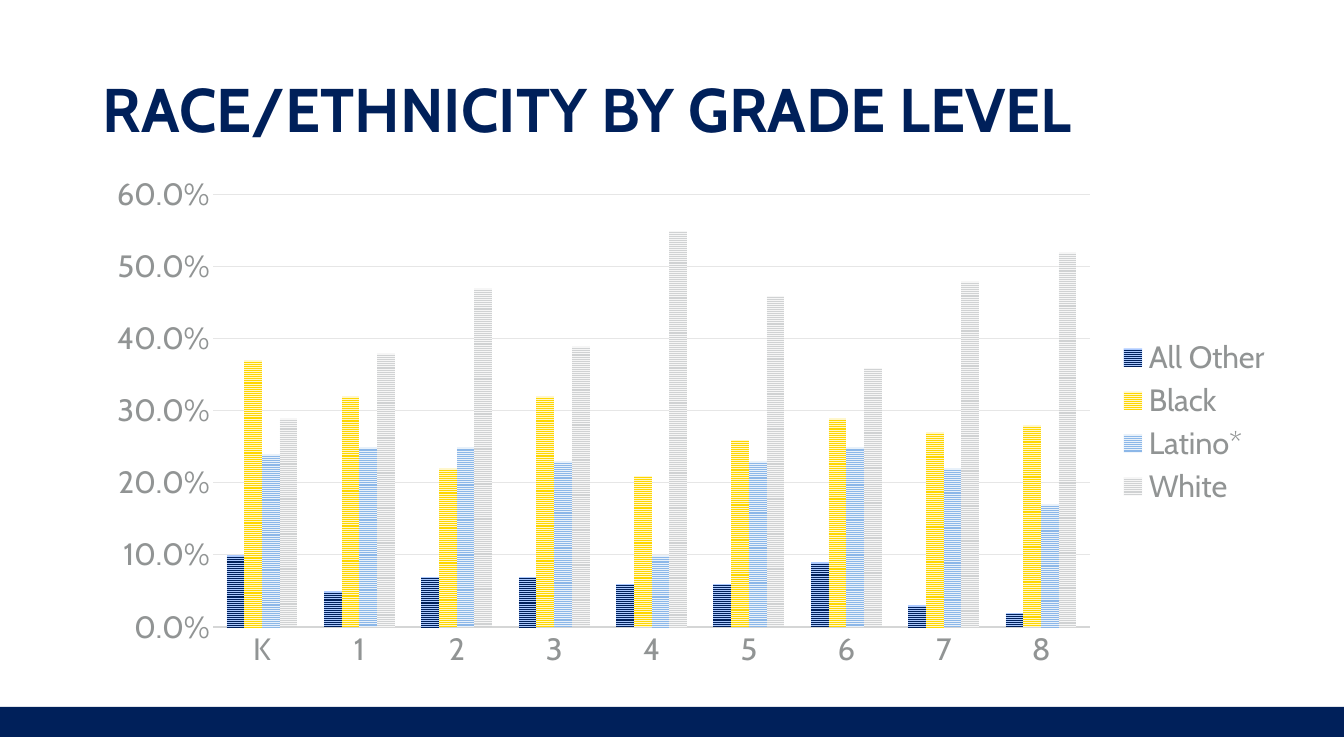
from dataclasses import dataclass

from pptx import Presentation, util as u
from pptx.chart.data import CategoryChartData
from pptx.dml.color import RGBColor
from pptx.enum import chart as charts, dml, shapes, text


@dataclass(frozen=True)
class Theme:
    font: str = "Cabin"
    navy: str = "00205A"
    label: str = "919494"
    axis: str = "D5D6D6"
    grid: str = "E6E6E6"
    title_size: int = 44
    chart_size: int = 22
    # Foreground and background of each striped series
    stripes: tuple = (
        ("00205A", "ABC9FF"),
        ("FED601", "FFF7CC"),
        ("8CB7E8", "E8F1FA"),
        ("D0D2D3", "F6F6F6"),
    )


GRADES = ["K", "1", "2", "3", "4", "5", "6", "7", "8"]
SHARES = {
    "All Other": [0.10, 0.05, 0.07, 0.07, 0.06, 0.06, 0.09, 0.03, 0.02],
    "Black": [0.37, 0.32, 0.22, 0.32, 0.21, 0.26, 0.29, 0.27, 0.28],
    "Latino*": [0.24, 0.25, 0.25, 0.23, 0.10, 0.23, 0.25, 0.22, 0.17],
    "White": [0.29, 0.38, 0.47, 0.39, 0.55, 0.46, 0.36, 0.48, 0.52],
}
PAGE_WIDTH, PAGE_HEIGHT = 1344, 756


def px(*lengths):
    return [u.Emu(round(length * u.Inches(1) / 100.8)) for length in lengths]


def rgb(code):
    return RGBColor.from_string(code)


class SlideBuilder:
    def __init__(self, page, theme):
        self.page = page
        self.theme = theme

    def style_font(self, font, size, color, bold=False):
        font.name = self.theme.font
        font.size = u.Pt(size)
        font.bold = bold
        font.color.rgb = rgb(color)

    def band(self, left, top, width, height, color):
        box = self.page.shapes.add_shape(
            shapes.MSO_SHAPE.RECTANGLE, *px(left, top, width, height))
        box.shadow.inherit = False
        box.fill.solid()
        box.fill.fore_color.rgb = rgb(color)
        box.line.fill.background()

    def title(self, left, top, width, height, words):
        box = self.page.shapes.add_textbox(*px(left, top, width, height))
        frame = box.text_frame
        frame.text = words
        frame.word_wrap = True
        frame.vertical_anchor = text.MSO_ANCHOR.MIDDLE
        para = frame.paragraphs[0]
        para.line_spacing = 0.9
        self.style_font(para.runs[0].font, self.theme.title_size, self.theme.navy, True)

    def column_chart(self, left, top, width, height, categories, shares):
        theme = self.theme
        chart_data = CategoryChartData(number_format="0.0%")
        chart_data.categories = categories
        for name, values in shares.items():
            chart_data.add_series(name, values)
        chart = self.page.shapes.add_chart(
            charts.XL_CHART_TYPE.COLUMN_CLUSTERED,
            *px(left, top, width, height), chart_data).chart
        chart.has_title = False
        self.style_font(chart.font, theme.chart_size, theme.label)

        # Striped columns
        plot = chart.plots[0]
        plot.vary_by_categories = False
        plot.gap_width = 150
        plot.overlap = 0
        for series, (front, back) in zip(plot.series, theme.stripes):
            series.invert_if_negative = False
            fill = series.format.fill
            fill.patterned()
            fill.pattern = dml.MSO_PATTERN.NARROW_HORIZONTAL
            fill.fore_color.rgb = rgb(front)
            fill.back_color.rgb = rgb(back)

        # Axes and gridlines
        for axis in (chart.category_axis, chart.value_axis):
            axis.major_tick_mark = axis.minor_tick_mark = charts.XL_TICK_MARK.NONE
            self.style_font(axis.tick_labels.font, theme.chart_size, theme.label)
        base_line = chart.category_axis.format.line
        base_line.color.rgb = rgb(theme.axis)
        base_line.width = u.Pt(1.5)
        scale = chart.value_axis
        scale.minimum_scale, scale.maximum_scale, scale.major_unit = 0, 0.6, 0.1
        scale.tick_labels.number_format = "0.0%"
        scale.tick_labels.number_format_is_linked = False
        scale.format.line.fill.background()
        grid_line = scale.major_gridlines.format.line
        grid_line.color.rgb = rgb(theme.grid)
        grid_line.width = u.Pt(0.75)

        # Legend
        chart.has_legend = True
        chart.legend.position = charts.XL_LEGEND_POSITION.RIGHT
        chart.legend.include_in_layout = False
        self.style_font(chart.legend.font, theme.chart_size, theme.label)


def main():
    deck = Presentation()
    deck.slide_width, deck.slide_height = px(PAGE_WIDTH, PAGE_HEIGHT)
    theme = Theme()
    builder = SlideBuilder(deck.slides.add_slide(deck.slide_layouts[6]), theme)

    # Footer band, heading and chart
    builder.band(0, 707, PAGE_WIDTH, 30, theme.navy)
    builder.title(93, 40, 1159, 146, "RACE/ETHNICITY BY GRADE LEVEL")
    builder.column_chart(93, 166, 1190, 512, GRADES, SHARES)

    deck.save("out.pptx")


if __name__ == "__main__":
    main()
